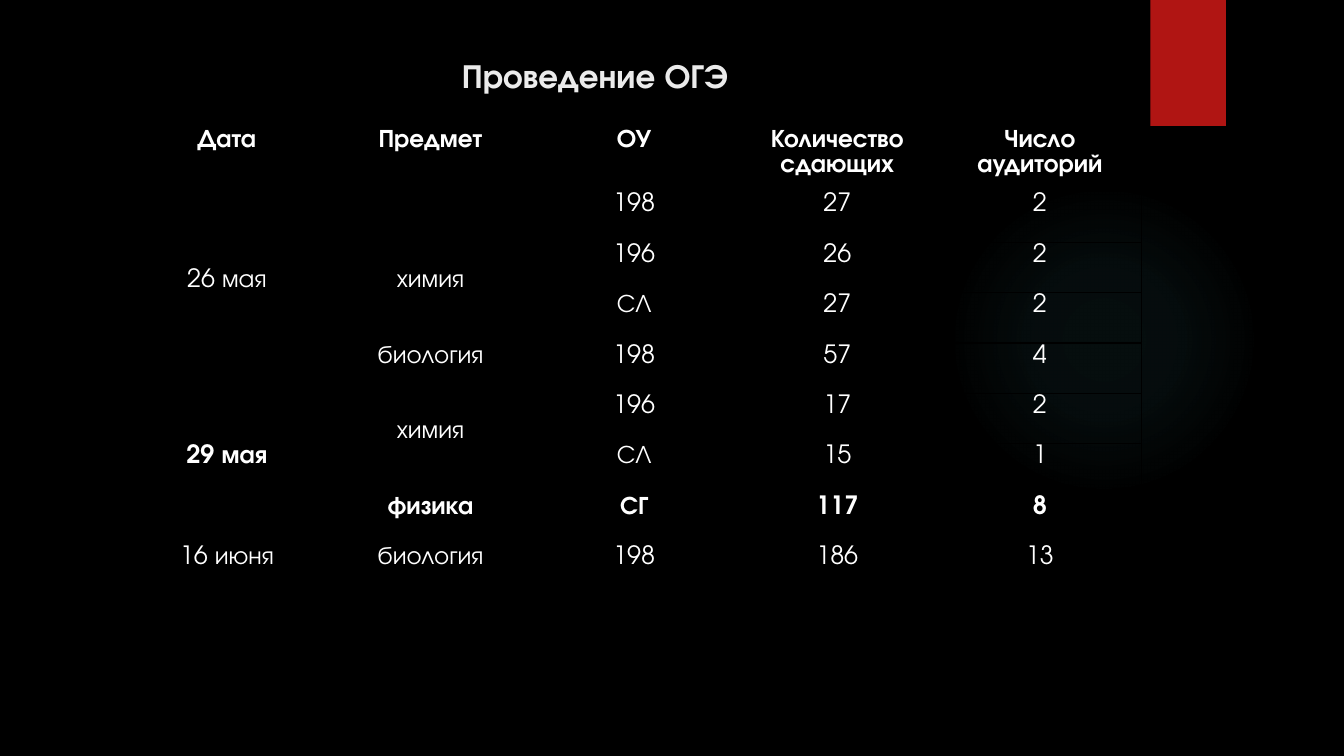
from pptx import Presentation
from pptx.dml.color import RGBColor
from pptx.enum.shapes import MSO_SHAPE as Shape
from pptx.enum.text import MSO_ANCHOR as Anchor, PP_ALIGN as Align
from pptx.oxml import parse_xml
from pptx.oxml.ns import nsdecls, qn
from pptx.util import Inches, Pt

COLORS = {"black": "000000", "white": "FFFFFF", "title": "EBEBEB",
          "red": "B01513", "glow": "50B9C1"}
FONT = "TeX Gyre Adventor"
ROW_HEIGHT = 0.5
LINE_HEIGHT = 0.25


def write(paragraph, text, size, color, bold):
    paragraph.text = text
    paragraph.alignment = Align.CENTER
    font = paragraph.font
    font.name, font.size, font.bold = FONT, Pt(size), bold
    font.color.rgb = RGBColor.from_string(COLORS[color])


deck = Presentation()
deck.slide_width, deck.slide_height = Inches(13.33), Inches(7.5)
page = deck.slides.add_slide(deck.slide_layouts[6])
page.background.fill.solid()
page.background.fill.fore_color.rgb = RGBColor.from_string(COLORS["black"])

# Backdrop: a faint round glow and the red tab
glow = page.shapes.add_shape(Shape.OVAL, Inches(9.41), Inches(1.83), Inches(3.08), Inches(3.08))
glow.shadow.inherit = False
glow.line.fill.background()
glow.fill.background()
stops = "".join(
    f'<a:gs pos="{place * 1000}"><a:srgbClr val="{COLORS["glow"]}">'
    f'<a:alpha val="{opacity * 1000}"/></a:srgbClr></a:gs>'
    for place, opacity in [(0, 7), (36, 6), (69, 0), (100, 0)])
gradient = parse_xml(
    f'<a:gradFill {nsdecls("a")} rotWithShape="1"><a:gsLst>{stops}</a:gsLst>'
    '<a:path path="circle"><a:fillToRect l="50000" t="50000" r="50000" b="50000"/></a:path>'
    '</a:gradFill>')
properties = glow._element.spPr
properties.replace(properties.find(qn("a:noFill")), gradient)

tab = page.shapes.add_shape(Shape.RECTANGLE, Inches(11.41), 0, Inches(0.75), Inches(1.25))
tab.shadow.inherit = False
tab.fill.solid()
tab.fill.fore_color.rgb = RGBColor.from_string(COLORS["red"])
tab.line.fill.background()

title = page.shapes.add_textbox(Inches(0.71), Inches(0.5), Inches(10.29), Inches(1.53))
title.text_frame.word_wrap = True
write(title.text_frame.paragraphs[0], " Проведение ОГЭ", 24, "title", True)

# Exam table: empty strings are covered by a merged cell
rows = [
    ["Дата", "Предмет", "ОУ", "Количество сдающих", "Число аудиторий"],
    ["26 мая", "химия", "198", "27", "2"],
    ["", "", "196", "26", "2"],
    ["", "", "СЛ", "27", "2"],
    ["", "биология", "198", "57", "4"],
    ["29 мая", "химия", "196", "17", "2"],
    ["", "", "СЛ", "15", "1"],
    ["", "физика", "СГ", "117", "8"],
    ["16 июня", "биология", "198", "186", "13"],
]
# (row, column): (rows spanned, lines left free above the text)
merges = {(1, 0): (4, 3), (1, 1): (3, 3), (5, 0): (3, 2), (5, 1): (2, 1)}
bold_cells = {(0, column) for column in range(5)}
bold_cells |= {(7, column) for column in range(1, 5)} | {(5, 0)}

frame = page.shapes.add_table(len(rows), 5, Inches(1.24), Inches(1.26),
                              Inches(10.08), Inches(ROW_HEIGHT * len(rows)))
table = frame.table
table.first_row = table.horz_banding = False
for column, width in zip(table.columns, [2.02, 2.02, 2.02, 2.01, 2.01]):
    column.width = Inches(width)

for row, texts in enumerate(rows):
    table.rows[row].height = Inches(ROW_HEIGHT)
    for column, text in enumerate(texts):
        cell = table.cell(row, column)
        span, free_lines = merges.get((row, column), (1, 0))
        if span > 1:
            cell.merge(table.cell(row + span - 1, column))
        cell.fill.background()
        cell.vertical_anchor = Anchor.TOP
        cell.margin_left = cell.margin_right = Inches(0.07)
        cell.margin_top, cell.margin_bottom = Inches(LINE_HEIGHT * free_lines), 0
        para = cell.text_frame.paragraphs[0]
        write(para, text, 18, "white", (row, column) in bold_cells)
        para.line_spacing = 1.07
        for index, side in enumerate(["lnL", "lnR", "lnT", "lnB"]):
            border = parse_xml(
                f'<a:{side} {nsdecls("a")} w="12700"><a:solidFill>'
                f'<a:srgbClr val="{COLORS["black"]}"/></a:solidFill></a:{side}>')
            cell._tc.get_or_add_tcPr().insert(index, border)

deck.save("out.pptx")
